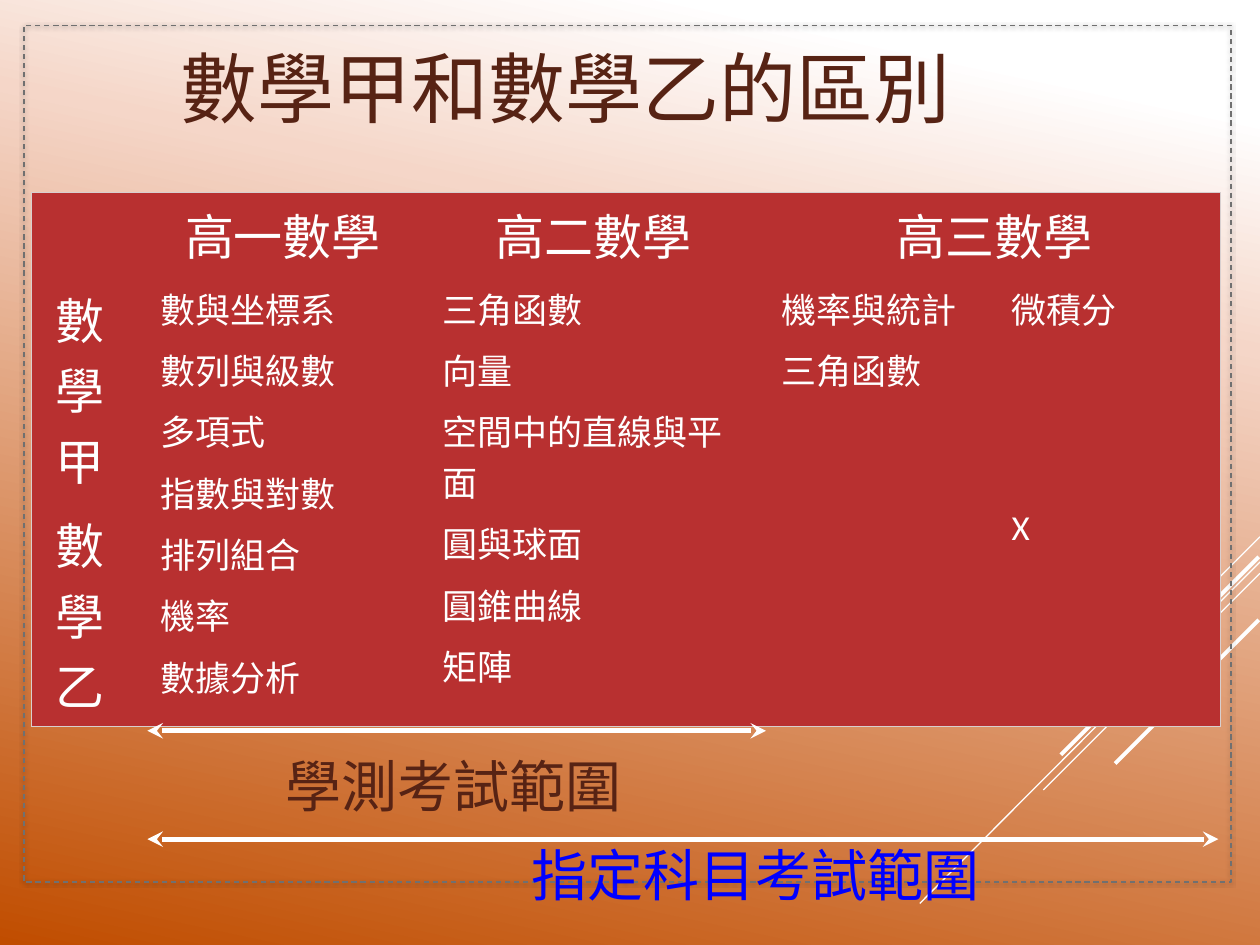
"""Build a slide comparing the scope of Math A and Math B exams."""
from copy import deepcopy
from lxml import etree
from pptx import Presentation
from pptx import util as u
from pptx.dml.color import RGBColor as RGB
from pptx.enum import dml, shapes, text
from pptx.oxml import parse_xml
from pptx.oxml.ns import nsdecls, qn

HUES = {"white": "FFFFFF", "blush": "F5D6C8", "rust": "C04D00", "brown": "572314",
        "blue": "0000FF", "red": "B83030", "edge": "D8CFCF", "gray": "707070"}
CJK = "Noto Sans CJK SC"
WIDE, HIGH = 10, 7.5

deck = Presentation()
deck.slide_width, deck.slide_height = u.Inches(WIDE), u.Inches(HIGH)
col, row = deck.slide_width / WIDE, deck.slide_height / HIGH
slide = deck.slides.add_slide(deck.slide_layouts[5])


def write(para, words, size, hue, face=CJK):
    run = para.add_run()
    run.text = words
    run.font.size, run.font.name = u.Pt(size), face
    run.font.color.rgb = RGB.from_string(HUES[hue])
    etree.SubElement(run.font._element, qn("a:ea")).set("typeface", CJK)


def draw(x1, y1, x2, y2, width):
    line = slide.shapes.add_connector(
        shapes.MSO_CONNECTOR.STRAIGHT, *map(int, (x1 * col, y1 * row, x2 * col, y2 * row)))
    line.line.color.rgb = RGB.from_string(HUES["white"])
    line.line.width = u.Pt(width)
    etree.SubElement(line._element.spPr, qn("a:effectLst"))
    return line


fill = slide.background.fill
fill.gradient()
stops = slide.element.xpath(".//p:bg//a:gsLst")[0]
base = deepcopy(stops[0])
for stop in list(stops):
    stops.remove(stop)
for pos, hue in ((10, "white"), (29, "blush"), (100, "rust")):
    stop = deepcopy(base)
    stop.set("pos", str(pos * 1000))
    for tint in list(stop):
        stop.remove(tint)
    etree.SubElement(stop, qn("a:srgbClr")).set("val", HUES[hue])
    stops.append(stop)
fill.gradient_angle = 360 - 102

for x1, y1, x2, y2, width in (
        (10, 4.26, 9.17, 5.09, 0.75), (10, 4.46, 7.3, 7.17, 0.75),
        (10, 4.55, 8.28, 6.27, 0.75), (9.99, 4.42, 8.42, 5.99, 2.25),
        (9.99, 4.92, 8.85, 6.06, 2.25)):
    draw(x1, y1, x2, y2, width)

frame = slide.shapes.add_shape(shapes.MSO_SHAPE.RECTANGLE, int(0.19 * col), int(0.2 * row),
                               int(9.58 * col), int(6.8 * row))
frame.fill.background()
frame.line.color.rgb = RGB.from_string(HUES["gray"])
frame.line.width = u.Pt(0.75)
frame.line.dash_style = dml.MSO_LINE.DASH
frame.shadow.inherit = False
frame._element.spPr.find(qn("a:effectLst")).append(parse_xml(
    f'<a:outerShdw {nsdecls("a")} blurRad="25400" dist="12700" dir="5400000">'
    '<a:srgbClr val="000000"><a:alpha val="60000"/></a:srgbClr></a:outerShdw>'))

cols, rows = (0.83, 2.24, 2.69, 1.83, 1.85), (0.64, 1.67, 1.68)
grid = slide.shapes.add_table(3, 5, int(0.25 * col), int(1.53 * row),
                              int(sum(cols) * col), int(sum(rows) * row)).table
grid.first_row = grid.horz_banding = False
for part, size in zip(grid.columns, cols):
    part.width = int(size * col)
for part, size in zip(grid.rows, rows):
    part.height = int(size * row)
grid.cell(0, 3).merge(grid.cell(0, 4))
for c in (1, 2, 3):
    grid.cell(1, c).merge(grid.cell(2, c))

items = {
    (0, 1): ["高一數學"], (0, 2): ["高二數學"], (0, 3): ["高三數學"],
    (1, 0): ["數學甲"], (2, 0): ["數學乙"],
    (1, 1): ["數與坐標系", "數列與級數", "多項式", "指數與對數", "排列組合", "機率", "數據分析"],
    (1, 2): ["三角函數", "向量", "空間中的直線與平面", "圓與球面", "圓錐曲線", "矩陣"],
    (1, 3): ["機率與統計", "三角函數"], (1, 4): ["微積分"], (2, 4): ["X"]}
for r in range(3):
    for c in range(5):
        cell = grid.cell(r, c)
        props = cell._tc.get_or_add_tcPr()
        outer = {"L": c == 0, "R": c + cell.span_width >= 5,
                 "T": r == 0, "B": r + cell.span_height >= 3}
        for side, shown in outer.items():
            paint = (f'<a:solidFill><a:srgbClr val="{HUES["edge"]}"><a:alpha val="60000"/>'
                     '</a:srgbClr></a:solidFill>' if shown else '<a:noFill/>')
            props.append(parse_xml(f'<a:ln{side} {nsdecls("a")} w="9525">{paint}</a:ln{side}>'))
        cell.fill.solid()
        cell.fill.fore_color.rgb = RGB.from_string(HUES["red"])
        for i, words in enumerate(items.get((r, c), [])):
            para = cell.text_frame.paragraphs[0] if i == 0 else cell.text_frame.add_paragraph()
            para.space_before = u.Pt(6)
            para._p.get_or_add_pPr().set("marL", str(u.Inches(0.09)))
            if r == 0:
                para.alignment = text.PP_ALIGN.CENTER
            write(para, words, 28 if r == 0 or c == 0 else 20, "white", "Calibri")

for end, y in ((6.08, 5.8), (9.67, 6.66)):
    arrow = draw(1.17, y, end, y, 3)
    for tip in ("a:headEnd", "a:tailEnd"):
        etree.SubElement(arrow.line._get_or_add_ln(), qn(tip)).set("type", "stealth")

for x, y, w, h, words, size, hue in (
        (1.33, 0.25, 7.57, 0.83, "數學甲和數學乙的區別", 44, "brown"),
        (2.17, 5.92, 3.92, 0.58, "學測考試範圍", 32, "brown"),
        (4.12, 6.62, 3.92, 0.58, "指定科目考試範圍", 32, "blue")):
    spot = [int(v) for v in (x * col, y * row, w * col, h * row)]
    if size == 44:
        box = slide.shapes.title
        box.left, box.top, box.width, box.height = spot
    else:
        box = slide.shapes.add_textbox(*spot)
    body = box.text_frame
    body.word_wrap, body.auto_size = True, text.MSO_AUTO_SIZE.NONE
    body.vertical_anchor = text.MSO_ANCHOR.MIDDLE
    body.margin_bottom = 0
    body.paragraphs[0].alignment = text.PP_ALIGN.LEFT
    write(body.paragraphs[0], words, size, hue)

deck.save("out.pptx")
